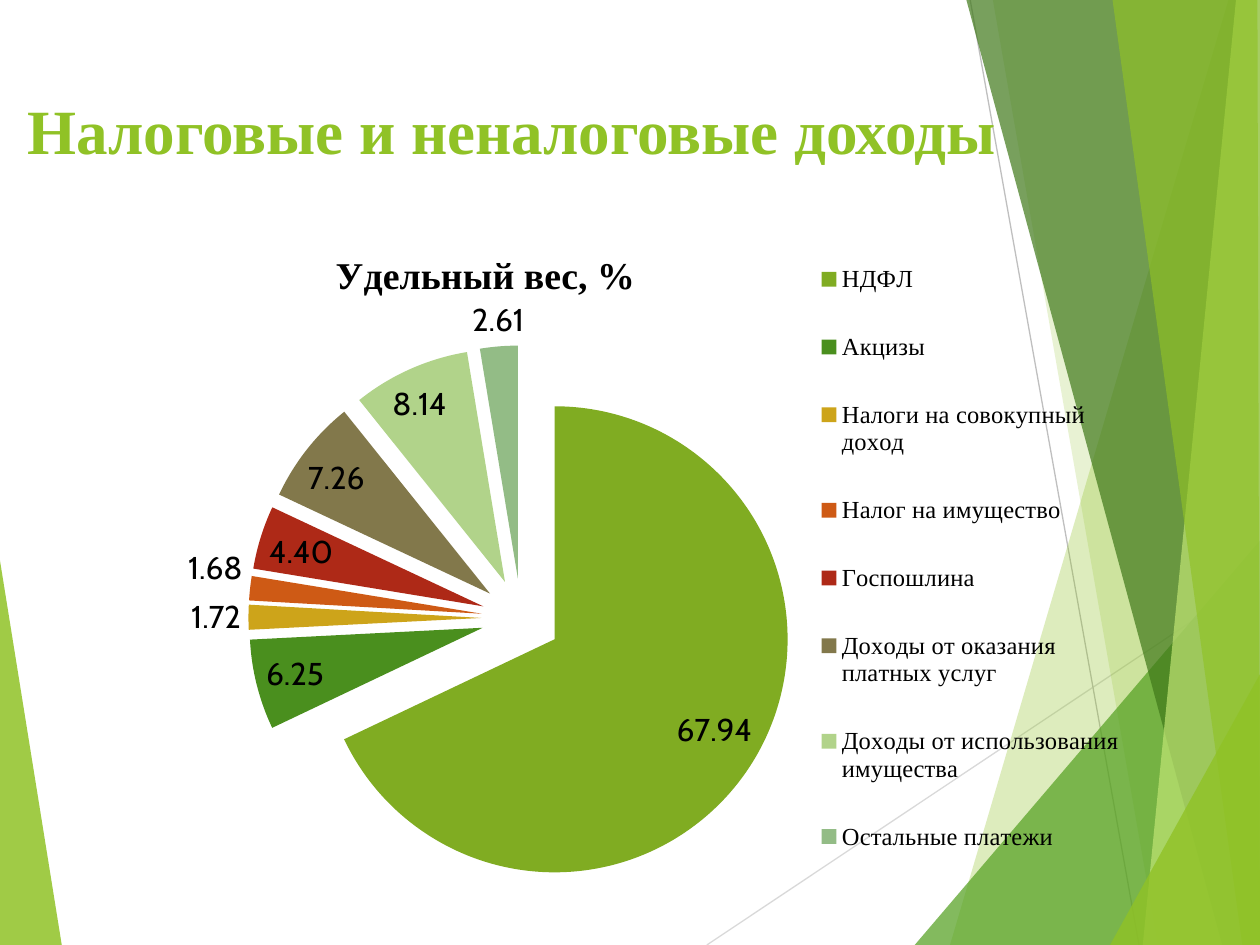
from dataclasses import dataclass

from lxml.etree import SubElement
from pptx import Presentation
from pptx.chart.data import CategoryChartData
from pptx.dml.color import RGBColor
from pptx.enum.chart import XL_CHART_TYPE as ChartType
from pptx.enum.chart import XL_LABEL_POSITION as LabelPosition
from pptx.enum.chart import XL_LEGEND_POSITION as LegendPosition
from pptx.enum.shapes import MSO_CONNECTOR as Connector
from pptx.enum.text import MSO_ANCHOR as Anchor
from pptx.oxml import parse_xml
from pptx.oxml.ns import nsdecls, qn
from pptx.util import Inches, Pt


@dataclass(frozen=True)
class Theme:
    serif: str = "Times New Roman"
    sans: str = "Cabin"
    lime: str = "90C226"
    green: str = "54A021"
    forest: str = "3F7819"
    pale: str = "C0E474"
    black: str = "000000"
    heading: float = 36
    chart_title: float = 21.6
    value: float = 18
    legend: float = 14


THEME = Theme()
COLUMNS, ROWS = 10, 7.5  # one grid cell is one inch
CELL = Inches(1)

# Corners in columns and rows, colour, opacity in percent
LEFT_WEDGE = ([(0, 4.45), (0.49, 7.5), (0, 7.5)], THEME.lime, 85)
RIGHT_BANDS = [
    ([(9.75, 0), (7.54, 7.5), (10, 7.5), (10, 0)], THEME.lime, 30),
    ([(7.88, 0), (9.19, 7.5), (10, 7.5), (10, 0)], THEME.lime, 20),
    ([(7.26, 7.5), (10, 4.29), (10, 7.5)], THEME.green, 72),
    ([(7.67, 0), (9.7, 7.5), (10, 7.5), (10, 0)], THEME.forest, 70),
    ([(9.81, 0), (9.07, 7.5), (10, 7.5), (10, 0)], THEME.pale, 70),
    ([(8.83, 0), (9.86, 7.5), (10, 7.5), (9.98, 0)], THEME.lime, 65),
    ([(8.81, 7.5), (10, 5.35), (10, 7.5)], THEME.lime, 80),
]
RAYS = [((5.61, 7.5), (10, 4.57), "D9D9D9"), ((7.7, 0), (9.04, 7.5), "BFBFBF")]

# Income source, share in percent, slice colour
INCOME = [
    ("НДФЛ", 67.94, "80AC22"),
    ("Акцизы", 6.25, "4A8F1E"),
    ("Налоги на совокупный доход", 1.72, "CDA41A"),
    ("Налог на имущество", 1.68, "CE5A15"),
    ("Госпошлина", 4.40, "AE2917"),
    ("Доходы от оказания платных услуг", 7.26, "82784B"),
    ("Доходы от использования имущества", 8.14, "B1D38A"),
    ("Остальные платежи", 2.61, "93BC86"),
]


def grid(*lengths):
    return [round(length * CELL) for length in lengths]


def style(font, face=THEME.serif, size=THEME.legend, color=THEME.black, bold=False):
    font.name, font.size, font.bold = face, Pt(size), bold
    font.color.rgb = RGBColor.from_string(color)


def write(frame, text, **format):
    run = frame.paragraphs[0].add_run()
    run.text = text
    style(run.font, **format)


def add_band(slide, corners, color, opacity):
    start, *others = [grid(*corner) for corner in corners]
    builder = slide.shapes.build_freeform(*start)
    builder.add_line_segments(others, close=True)
    band = builder.convert_to_shape()
    band.shadow.inherit = False
    band.line.fill.background()
    band.fill.solid()
    band.fill.fore_color.rgb = RGBColor.from_string(color)
    tint = band._element.spPr.find(qn("a:solidFill"))[0]
    SubElement(tint, qn("a:alpha"), val=str(opacity * 1000))


def add_ray(slide, start, end, color):
    ray = slide.shapes.add_connector(Connector.STRAIGHT, *grid(*start, *end))
    ray.line.color.rgb = RGBColor.from_string(color)
    ray.line.width = Pt(0.75)
    SubElement(ray._element.spPr, qn("a:effectLst"))


def add_heading(slide, text):
    heading = slide.shapes.add_textbox(*grid(0.12, 0.63, 8.19, 0.79)).text_frame
    heading.word_wrap = True
    heading.vertical_anchor = Anchor.MIDDLE
    write(heading, text, size=THEME.heading, color=THEME.lime, bold=True)


def place(part, before, **percents):
    """Position a chart part by percents of the chart's size."""
    modes = "".join(f'<c:{axis}Mode val="edge"/>' for axis in "xy")
    sizes = "".join(
        f'<c:{key} val="{percent / 100:.3f}"/>' for key, percent in percents.items()
    )
    target = '<c:layoutTarget val="inner"/>' if before == "c:pieChart" else ""
    for old in part.findall(qn("c:layout")):
        part.remove(old)
    layout = parse_xml(
        f'<c:layout {nsdecls("c")}><c:manualLayout>{target}{modes}{sizes}'
        "</c:manualLayout></c:layout>"
    )
    part.find(qn(before)).addprevious(layout)


def add_income_pie(slide, title):
    data = CategoryChartData(number_format="0.00")
    data.categories = [source for source, _, _ in INCOME]
    data.add_series(title, [share for _, share, _ in INCOME])
    area = grid(0.67, 1.62, 8.98, 5.59)
    chart = slide.shapes.add_chart(ChartType.PIE, *area, data).chart
    style(chart.font, face=THEME.sans, size=THEME.value)

    # Title and legend
    chart.has_title = True
    write(chart.chart_title.text_frame, title, size=THEME.chart_title, bold=True)
    chart.chart_title.include_in_layout = False
    chart.has_legend = True
    chart.legend.position = LegendPosition.RIGHT
    chart.legend.include_in_layout = False
    style(chart.legend.font)

    # Slices, pulled apart
    pie = chart.plots[0]
    pie.vary_by_categories = True
    shares = pie.series[0]
    for index, (_, _, color) in enumerate(INCOME):
        fill = shares.points[index].format.fill
        fill.solid()
        fill.fore_color.rgb = RGBColor.from_string(color)
    explosion = parse_xml(f'<c:explosion {nsdecls("c")} val="17"/>')
    shares._element.find(qn("c:dPt")).addprevious(explosion)

    # Values
    pie.has_data_labels = True
    labels = pie.data_labels
    labels.show_value, labels.show_percentage = True, False
    labels.number_format, labels.number_format_is_linked = "0.00", False
    labels.position = LabelPosition.BEST_FIT
    style(labels.font, face=THEME.sans, size=THEME.value)

    # Arrangement inside the chart
    place(chart.chart_title._element, "c:overlay", x=21.6, y=5.6)
    place(chart.legend._element, "c:overlay", x=63.8, y=3, w=29, h=94.5)
    plot_area = chart._chartSpace.chart.plotArea
    place(plot_area, "c:pieChart", x=14.5, y=19.8, w=48.2, h=78)


def main():
    deck = Presentation()
    deck.slide_width, deck.slide_height = grid(COLUMNS, ROWS)
    slide = deck.slides.add_slide(deck.slide_layouts[6])

    # Background decoration
    add_band(slide, *LEFT_WEDGE)
    for ray in RAYS:
        add_ray(slide, *ray)
    for band in RIGHT_BANDS:
        add_band(slide, *band)

    # Content
    add_heading(slide, "Налоговые и неналоговые доходы")
    add_income_pie(slide, "Удельный вес, %")
    deck.save("out.pptx")


if __name__ == "__main__":
    main()
